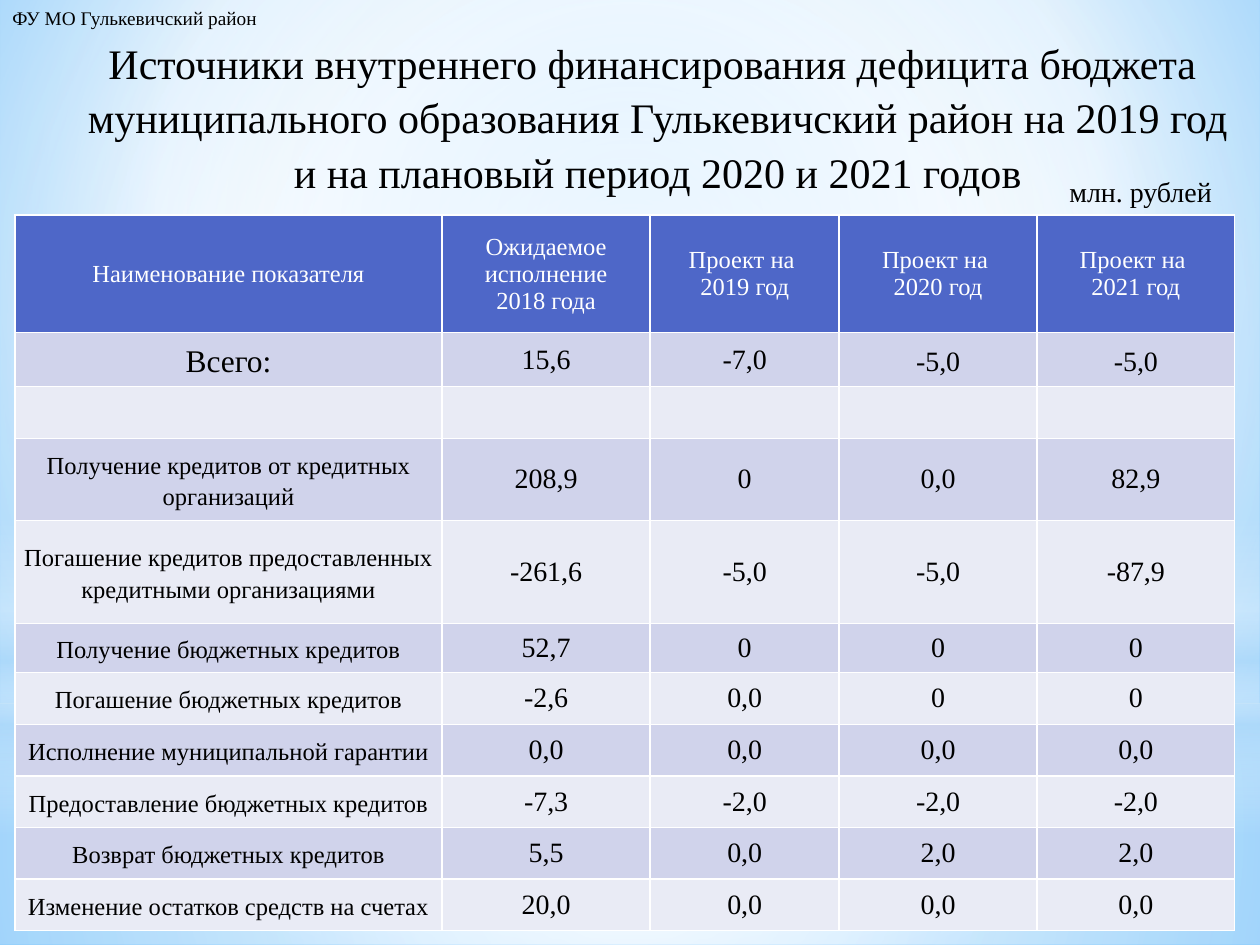
"""Build a slide with the sources of financing of a district budget deficit."""
import pptx
import pptx.util
import pptx.oxml
import pptx.oxml.ns
import pptx.dml.color
import pptx.enum.shapes
import pptx.enum.text

Pt = pptx.util.Pt
RGB = pptx.dml.color.RGBColor
KIND = pptx.enum.shapes.MSO_SHAPE
ANCHOR = pptx.enum.text.MSO_ANCHOR
ALIGN = pptx.enum.text.PP_ALIGN
FIT = pptx.enum.text.MSO_AUTO_SIZE
FONT = "Times New Roman"
BLACK = RGB(0x00, 0x00, 0x00)
WHITE = RGB(0xFF, 0xFF, 0xFF)
BLUE = RGB(0x4E, 0x67, 0xC8)
DARK = RGB(0xD0, 0xD3, 0xEB)
LIGHT = RGB(0xE9, 0xEB, 0xF5)
SKY = RGB(0xB4, 0xDC, 0xFA)
EDGE = RGB(0x5B, 0xB9, 0xFF)
CORE = RGB(0x9E, 0xD5, 0xFF)
MID = (50, 50, 50, 50)
NS = pptx.oxml.ns.nsdecls("a")


def shade(fill, root, stops, focus):
    fill.solid()
    marks = "".join(
        f'<a:gs pos="{spot * 1000}"><a:srgbClr val="{tint}">'
        f'<a:alpha val="{alpha * 1000}"/></a:srgbClr></a:gs>'
        for spot, tint, alpha in stops)
    if focus:
        sides = " ".join(f'{side}="{part * 1000}"' for side, part in zip("ltrb", focus))
        way = f'<a:path path="circle"><a:fillToRect {sides}/></a:path>'
    else:
        way = '<a:lin ang="5400000" scaled="0"/>'
    old = root.find(".//" + pptx.oxml.ns.qn("a:solidFill"))
    new = pptx.oxml.parse_xml(
        f'<a:gradFill {NS} rotWithShape="1"><a:gsLst>{marks}</a:gsLst>{way}</a:gradFill>')
    old.getparent().replace(old, new)


def write(frame, text, size, color=BLACK, align=ALIGN.CENTER, lead=None, after=0):
    for num, line in enumerate(text.split("\n")):
        para = frame.add_paragraph() if num else frame.paragraphs[0]
        para.alignment = align
        para.space_before = Pt(0)
        para.space_after = Pt(after)
        if lead:
            para.line_spacing = lead
        run = para.add_run()
        run.text = line
        run.font.name = FONT
        run.font.size = Pt(size)
        run.font.bold = False
        run.font.color.rgb = color


deck = pptx.Presentation()
deck.slide_width, deck.slide_height = Pt(720), Pt(540)
slide = deck.slides.add_slide(deck.slide_layouts[5])
shapes = slide.shapes
shade(slide.background.fill, slide.element,
      [(0, CORE, 100), (60, WHITE, 100), (100, EDGE, 100)], (20, 10, 20, 60))

glows = [
    (KIND.RECTANGLE, 401.8, 138.2,
     [(0, WHITE, 91), (37, WHITE, 76), (100, SKY, 79)], MID),
    (KIND.RECTANGLE, 0, 401.8,
     [(0, WHITE, 89), (48, WHITE, 62), (100, SKY, 79)], MID),
    (KIND.RECTANGLE, 296.6, 180,
     [(0, WHITE, 0), (29, WHITE, 30), (45, SKY, 40), (55, WHITE, 26),
      (65, SKY, 60), (100, WHITE, 0)], None),
    (KIND.OVAL, 126, 401.8, [(0, WHITE, 100), (56, WHITE, 0)], MID),
]
for kind, top, height, stops, focus in glows:
    glow = shapes.add_shape(kind, Pt(0), Pt(top), Pt(720), Pt(height))
    glow.shadow.inherit = False
    glow.line.fill.background()
    shade(glow.fill, glow.element, stops, focus)

heads = ["Наименование показателя", "Ожидаемое исполнение\n2018 года"]
heads += [f"Проект на \n{year} год" for year in (2019, 2020, 2021)]
rows = [
    heads,
    ["Всего:", "15,6", "-7,0", "-5,0", "-5,0"],
    [""] * 5,
    ["Получение кредитов от кредитных организаций", "208,9", "0", "0,0", "82,9"],
    ["Погашение кредитов предоставленных кредитными организациями",
     "-261,6", "-5,0", "-5,0", "-87,9"],
    ["Получение бюджетных кредитов", "52,7", "0", "0", "0"],
    ["Погашение бюджетных кредитов", "-2,6", "0,0", "0", "0"],
    ["Исполнение муниципальной гарантии", "0,0", "0,0", "0,0", "0,0"],
    ["Предоставление бюджетных кредитов", "-7,3", "-2,0", "-2,0", "-2,0"],
    ["Возврат бюджетных кредитов", "5,5", "0,0", "2,0", "2,0"],
    ["Изменение остатков средств на счетах", "20,0", "0,0", "0,0", "0,0"],
]
widths = [244, 119, 108, 113, 113]
heights = [67, 31, 29.5, 47, 59, 28] + [29.5] * 5
grid = shapes.add_table(len(rows), len(widths), Pt(8.6), Pt(123),
                        Pt(sum(widths)), Pt(sum(heights))).table
for col, width in zip(grid.columns, widths):
    col.width = Pt(width)
for row, height in zip(grid.rows, heights):
    row.height = Pt(height)

for i, row in enumerate(rows):
    for j, text in enumerate(row):
        cell = grid.cell(i, j)
        cell.vertical_anchor = ANCHOR.MIDDLE
        cell.margin_left = cell.margin_right = Pt(5 if i else 3.6)
        cell.margin_top = cell.margin_bottom = Pt(0 if i else 3.6)
        cell.fill.solid()
        cell.fill.fore_color.rgb = BLUE if i == 0 else DARK if i % 2 else LIGHT
        for at, side in enumerate("LRTB"):
            cell._tc.get_or_add_tcPr().insert(at, pptx.oxml.parse_xml(
                f'<a:ln{side} {NS} w="12700"><a:solidFill><a:srgbClr val="{WHITE}"/>'
                f'</a:solidFill></a:ln{side}>'))
        if not text:
            continue
        if i == 0:
            write(cell.text_frame, text, 14, WHITE)
        elif j == 0 or (i == 1 and j > 2):
            size = 16 if j else 18 if i == 1 else 14
            write(cell.text_frame, text, size, lead=1.15, after=10)
        else:
            write(cell.text_frame, text, 16)

title = shapes.title
shapes.element.append(title.element)
title.left, title.top, title.width, title.height = Pt(39.6), Pt(15), Pt(672.5), Pt(94.3)
title.text_frame.word_wrap = False
title.text_frame.auto_size = FIT.NONE
title.text_frame.vertical_anchor = ANCHOR.TOP
write(title.text_frame, "Источники внутреннего финансирования дефицита бюджета \n"
      "муниципального образования Гулькевичский район на 2019 год\n"
      "и на плановый период 2020 и 2021 годов", 24, lead=1.09)

notes = [
    ("ФУ МО Гулькевичский район", 11, 0, 0, 157, 21, False),
    ("млн. рублей", 16, 604, 96.5, 96.5, 26.6, True),
]
for text, size, left, top, width, height, wrap in notes:
    frame = shapes.add_textbox(Pt(left), Pt(top), Pt(width), Pt(height)).text_frame
    frame.word_wrap = wrap
    frame.auto_size = FIT.SHAPE_TO_FIT_TEXT
    write(frame, text, size, align=ALIGN.LEFT)

deck.save("out.pptx")
